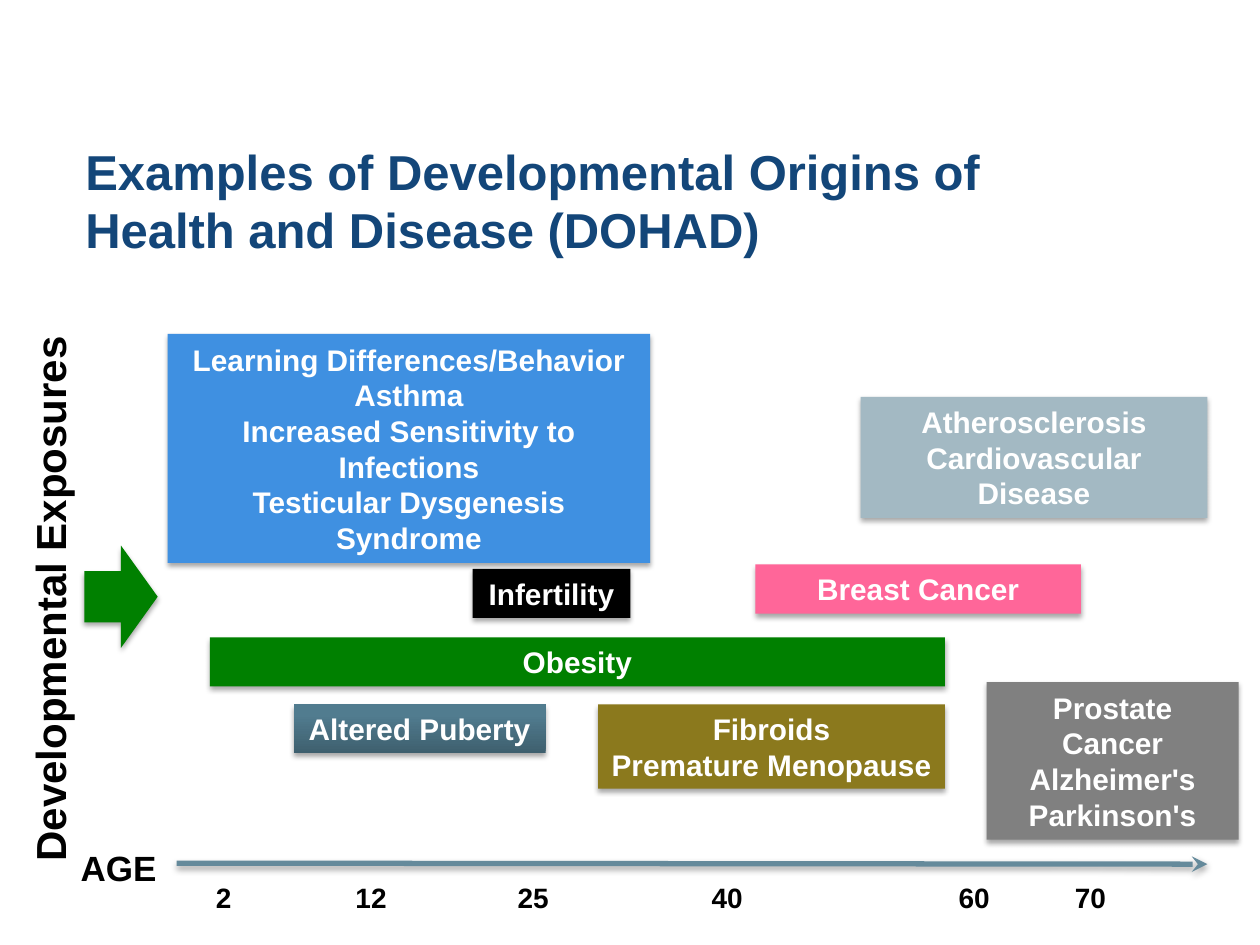
from lxml import etree
from pptx import Presentation, util as u
from pptx.dml.color import RGBColor
from pptx.enum import shapes, text
from pptx.oxml.ns import qn

HUES = {
    "navy": "134679", "ink": "000000", "white": "FFFFFF", "steel": "658A9B",
    "blue": "3F90E1", "green": "008000", "dark": "3E5F6E", "teal": "517C8F",
    "gold": "8B791D", "pink": "FF6699", "mist": "A3B9C3", "gray": "808080",
}
BAR = 0.99  # height of a one-line bar, cm
MID, LEFT = text.PP_ALIGN.CENTER, text.PP_ALIGN.LEFT

# Bars: lines, fill, offset and size in cm within the chart region
BARS = [
    (["Learning Differences/Behavior", "Asthma",
      "Increased Sensitivity to Infections",
      "Testicular Dysgenesis Syndrome"], "blue", (0, 0, 9.73, 4.62)),
    (["Obesity"], "green", (0.85, 6.12, 14.82, BAR)),
    (["Altered Puberty"], ("dark", "teal"), (2.54, 7.47, 5.08, BAR)),
    (["Infertility"], "ink", (6.15, 4.74, 3.18, BAR)),
    (["Fibroids", "Premature Menopause"], "gold", (8.68, 7.47, 6.99, 1.7)),
    (["Breast Cancer"], "pink", (11.85, 4.65, 6.56, BAR)),
    (["Atherosclerosis", "Cardiovascular Disease"], "mist",
     (13.97, 1.27, 6.99, 2.44)),
    (["Prostate Cancer", "Alzheimer's", "Parkinson's"], "gray",
     (16.51, 7.02, 5.08, 3.18)),
]

# Ages and their centres in cm from the left of the age row's text
AGES = {"2": 1.23, "12": 4.2, "25": 7.47, "40": 11.38, "60": 16.36, "70": 18.7}


def rgb(name):
    return RGBColor.from_string(HUES[name])


def place(box, dx, dy, w, h):
    return [u.Cm(v) for v in (box[0] + dx, box[1] + dy, w, h)]


def shade(item):
    """Give a soft drop shadow straight below the item."""
    props = item._element.spPr
    for old in props.findall(qn("a:effectLst")):
        props.remove(old)
    list_ = etree.SubElement(props, qn("a:effectLst"))
    drop = etree.SubElement(list_, qn("a:outerShdw"), blurRad="39370",
                            dist="22860", dir="5400000", rotWithShape="0")
    hue = etree.SubElement(drop, qn("a:srgbClr"), val=HUES["ink"])
    etree.SubElement(hue, qn("a:alpha"), val="35000")


def write(item, lines, size, hue, align=MID, tabs=()):
    frame = item.text_frame
    frame.word_wrap = True
    frame.auto_size = text.MSO_AUTO_SIZE.SHAPE_TO_FIT_TEXT
    for i, line in enumerate(lines):
        para = frame.paragraphs[0] if i == 0 else frame.add_paragraph()
        para.text, para.alignment = line, align
        if tabs:
            stops = etree.SubElement(para._p.get_or_add_pPr(), qn("a:tabLst"))
            for pos in tabs:
                etree.SubElement(stops, qn("a:tab"), pos=str(u.Cm(pos)),
                                 algn="ctr")
        look = {"name": "Arial", "size": u.Pt(size), "bold": True}
        font = para.runs[0].font
        for key, val in look.items():
            setattr(font, key, val)
        font.color.rgb = rgb(hue)


def label(slide, spot, lines, size, hue="ink", align=MID, tabs=()):
    item = slide.shapes.add_textbox(*spot)
    write(item, lines, size, hue, align, tabs)
    return item


def block(slide, kind, spot, fill):
    item = slide.shapes.add_shape(kind, *spot)
    item.line.fill.background()
    if isinstance(fill, tuple):
        item.fill.gradient()
        item.fill.gradient_angle = 90
        for stop, hue, pos in zip(item.fill.gradient_stops, fill, (0, 0.8)):
            stop.color.rgb, stop.position = rgb(hue), pos
    else:
        item.fill.solid()
        item.fill.fore_color.rgb = rgb(fill)
    shade(item)
    return item


def title(slide, box):
    lines = ["Examples of Developmental Origins of",
             "Health and Disease (DOHAD)"]
    label(slide, place(box, 0, 0, *box[2:]), lines, 28, "navy", LEFT)


def cause(slide, box):
    """Upright caption on the left, with the arrow into the chart."""
    side = label(slide, place(box, 0, 0, 1.27, box[3]),
                 ["Developmental Exposures"], 24)
    side.text_frame._txBody.bodyPr.set("vert", "vert270")
    block(slide, shapes.MSO_SHAPE.RIGHT_ARROW,
          place(box, 1.34, 5.49, 1.48, 2.06), "green")


def chart(slide, box):
    for lines, fill, spot in BARS:
        bar = block(slide, shapes.MSO_SHAPE.RECTANGLE, place(box, *spot), fill)
        write(bar, lines, 17, "white")


def axis(slide, box):
    # Arrow along the ages
    x, y, w, h = place(box, 2.54, 0.46, 20.78, 0.02)
    line = slide.shapes.add_connector(shapes.MSO_CONNECTOR.STRAIGHT,
                                      x, y, x + w, y + h)
    line.line.color.rgb = rgb("steel")
    line.line.width = u.Pt(3)
    etree.SubElement(line.line._get_or_add_ln(), qn("a:tailEnd"),
                     type="stealth")
    shade(line)
    # Caption and age marks
    label(slide, place(box, 0, 0, 2.74, 1.11), ["AGE"], 20)
    label(slide, place(box, 2.01, 0.69, 21.39, 0.94),
          ["".join("\t" + age for age in AGES)], 16, "ink", LEFT,
          AGES.values())


def main():
    deck = Presentation()
    deck.slide_width, deck.slide_height = u.Cm(25.4), u.Cm(19.05)
    slide = deck.slides.add_slide(deck.slide_layouts[6])
    cause(slide, (0.36, 5.51, 2.82, 13.13))
    axis(slide, (1.02, 16.94, 23.4, 1.63))
    chart(slide, (3.38, 6.73, 21.59, 10.2))
    title(slide, (1.47, 2.72, 23.06, 2.64))
    deck.save("out.pptx")


if __name__ == "__main__":
    main()
